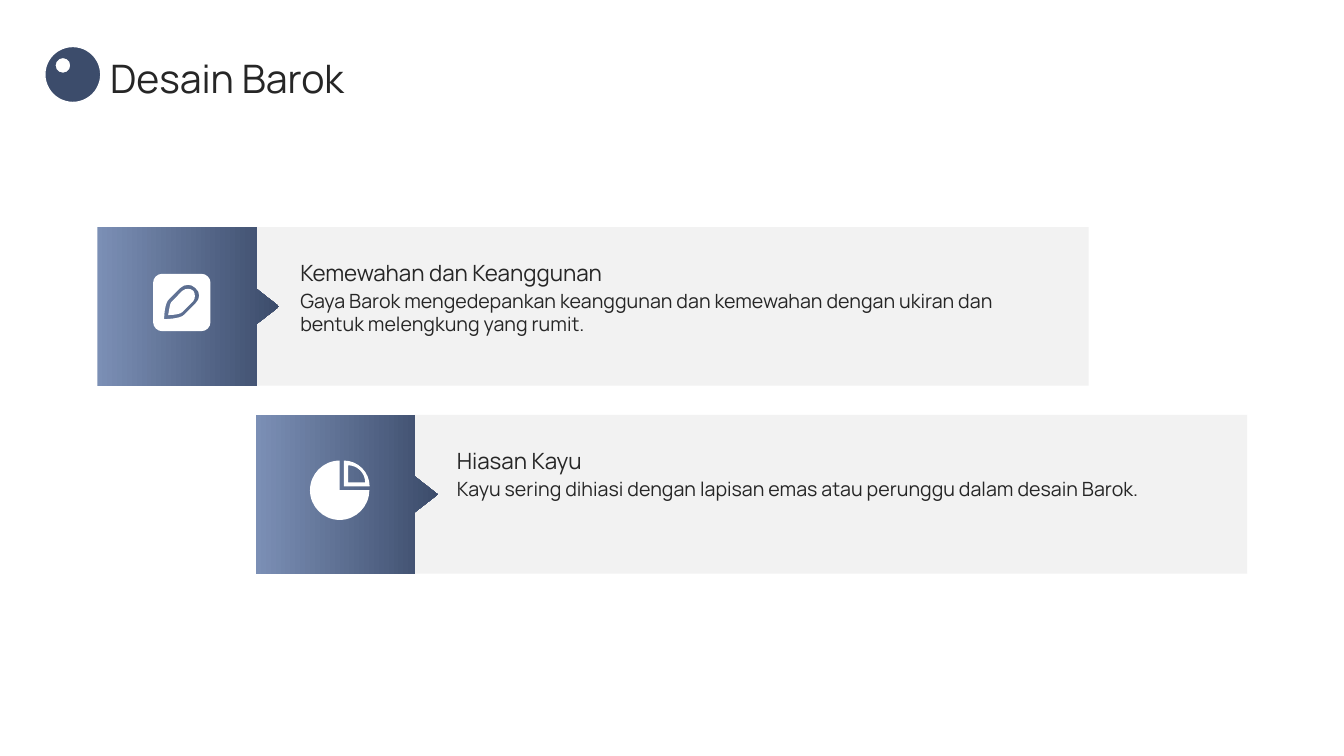
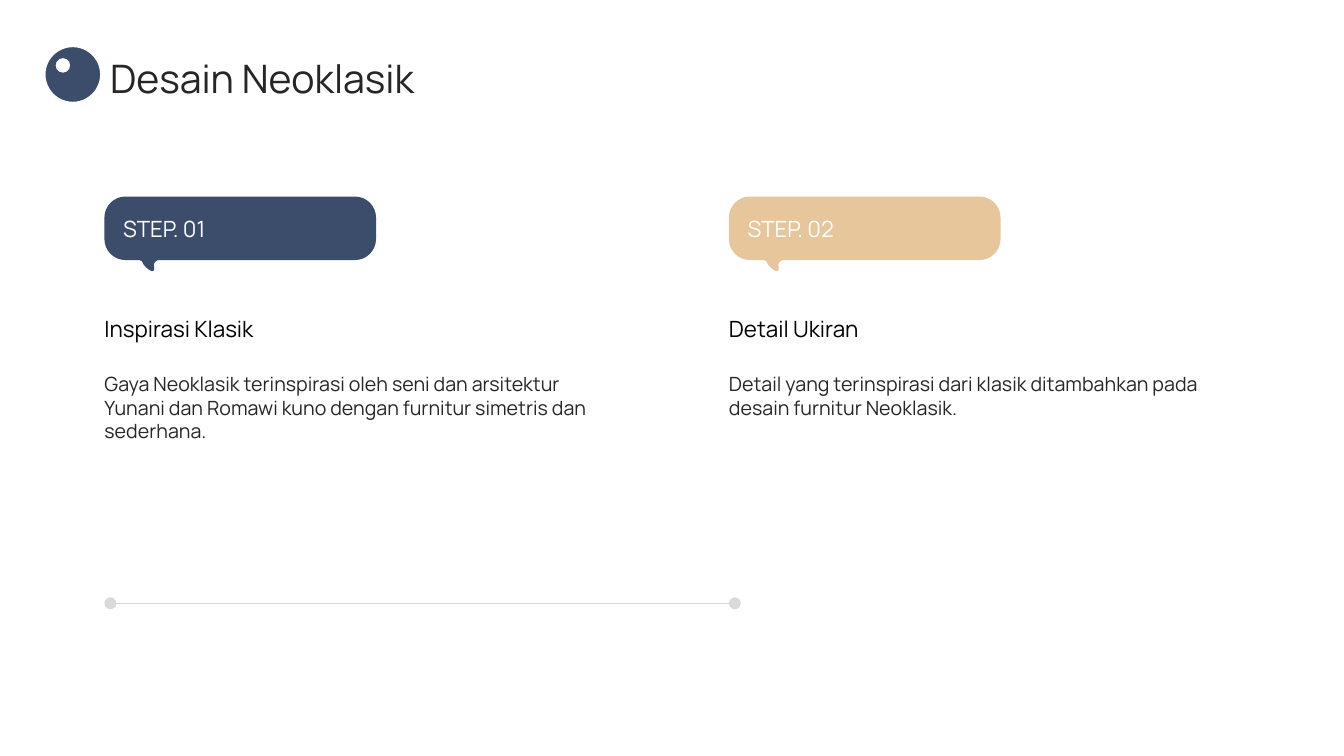
from math import cos, pi, sin

from lxml.etree import Element, SubElement
from pptx import Presentation
from pptx.dml.color import RGBColor
from pptx.enum.shapes import MSO_CONNECTOR, MSO_SHAPE
from pptx.enum.text import MSO_ANCHOR
from pptx.oxml.ns import qn
from pptx.util import Pt

FONT = "Manrope"
COLORS = {
    "navy": "3C4C6B", "sky": "7B8FB5", "sand": "E6C69A", "pale": "F2F2F2",
    "gray": "D9D9D9", "ink": "262626", "black": "000000", "white": "FFFFFF",
}


def rgb(name):
    return RGBColor.from_string(COLORS[name])


# Outlines: a point is a line, six numbers are a cubic curve
def arc(x, y, r, start, turns=1):
    """Clockwise quarter turns from the start angle."""
    path = []
    for i in range(turns + 1):
        t = (start + 90 * i) * pi / 180
        a, b = r * cos(t), r * sin(t)
        if i == 0:
            path.append((x + a, y + b))
        else:
            k = 0.55
            path.append((x + c - k * d, y + d + k * c,
                         x + a + k * b, y + b - k * a, x + a, y + b))
        c, d = a, b
    return path


def bevel(w, h, r, foot=()):
    """Rounded box, clockwise from the top left, with an optional foot."""
    return (arc(r, r, r, 180) + arc(w - r, r, r, 270) + arc(w - r, h - r, r, 0)
            + list(foot) + arc(r, h - r, r, 90))


PEN = [
    [(25.2, 10.8), (25.9, 10.8, 27.4, 10.8, 28.8, 12.2),
     (30.2, 14.4, 30.2, 17.3, 28.8, 19.4), (20.9, 27.4),
     (19.4, 28.8, 15.1, 29.5, 10.8, 29.5),
     (11.5, 25.2, 12.2, 20.9, 13, 20.2), (20.9, 12.2),
     (22.3, 10.8, 23.8, 10.8, 25.2, 10.8)],
    [(25.2, 7.9), (23, 7.9, 20.9, 8.6, 19.4, 10.1), (11.5, 18),
     (7.9, 20.9, 7.9, 32.4, 7.9, 32.4), (7.9, 32.4, 19.4, 32.4, 22.3, 29.2),
     (30.2, 21.2), (33.8, 18, 33.8, 13, 30.2, 10.1),
     (28.8, 8.6, 26.6, 7.9, 25.2, 7.9)],
    bevel(41, 41, 6.5),
]
PIE = [
    [(27.2, 15.6)] + arc(27.2, 15.6, 12.2, 270),
    [(24.2, 18.4)] + arc(24.2, 18.4, 18.4, 270),
    [(21.2, 21.2)] + arc(21.2, 21.2, 21.2, 0, 3),
]
BUBBLE = [bevel(194, 45.4, 15, [
    (38.6, 45.4), (38.4, 45.4, 38.2, 45.4, 38, 45.5),
    (34.6, 46.8, 35.1, 49.7, 35.6, 51.8),
    (35.7, 52.2, 35.6, 52.5, 35.4, 52.8),
    (35, 53.5, 34.4, 53.7, 33.8, 53.4),
    (31, 52, 28.1, 49.7, 26.8, 46.3), (26.5, 45.8, 25.9, 45.4, 25.2, 45.4),
])]
ARROW = [[(0, 0), (113.5, 0), (113.5, 44), (129.8, 56.8), (113.5, 69.5),
          (113.5, 113.5), (0, 113.5)]]


# Elements
def paint(item, fill, line=None):
    item.shadow.inherit = False
    item.fill.solid()
    item.fill.fore_color.rgb = rgb(fill)
    if line:
        item.line.color.rgb = rgb(line)
        item.line.width = Pt(1)
    else:
        item.line.fill.background()
    return item


def shape(slide, kind, x, y, w, h, fill, line=None):
    item = slide.shapes.add_shape(kind, Pt(x), Pt(y), Pt(w), Pt(h))
    return paint(item, fill, line)


def bend(node, seg, left, top):
    """Turn a line node into a cubic curve."""
    curve = Element(qn("a:cubicBezTo"))
    for a, b in zip(seg[::2], seg[1::2]):
        SubElement(curve, qn("a:pt"), x=str(Pt(a) - left), y=str(Pt(b) - top))
    node.getparent().replace(node, curve)


def form(slide, paths, x, y, fill):
    build, segs = None, []
    for path in paths:
        path = [[v + (y if i % 2 else x) for i, v in enumerate(seg)]
                for seg in path]
        pts = [(Pt(seg[-2]), Pt(seg[-1])) for seg in path]
        if build is None:
            build = slide.shapes.build_freeform(*pts[0])
        else:
            build.move_to(*pts[0])
        build.add_line_segments(pts[1:], close=True)
        segs += path[1:]
    item = build.convert_to_shape()
    nodes = list(item.element.iter(qn("a:lnTo")))
    for node, seg in zip(nodes, segs):
        if len(seg) == 6:
            bend(node, seg, item.left, item.top)
    return paint(item, fill)


def label(slide, text, x, y, w, h, size, color="ink", anchor=MSO_ANCHOR.TOP):
    frame = slide.shapes.add_textbox(Pt(x), Pt(y), Pt(w), Pt(h)).text_frame
    frame.margin_left = frame.margin_right = 0
    frame.margin_top = frame.margin_bottom = 0
    frame.word_wrap = True
    frame.vertical_anchor = anchor
    frame.text = text
    font = frame.paragraphs[0].runs[0].font
    font.name, font.size = FONT, Pt(size)
    font.color.rgb = rgb(color)


def rule(slide, x, y, end):
    line = slide.shapes.add_connector(
        MSO_CONNECTOR.STRAIGHT, Pt(x), Pt(y), Pt(end), Pt(y))
    line.line.color.rgb = rgb("gray")
    line.line.width = Pt(1)
    SubElement(line.element.spPr, qn("a:effectLst"))


def page(deck, title):
    slide = deck.slides.add_slide(deck.slide_layouts[6])
    label(slide, title, 78.7, 37.2, 855, 36.7, 28, anchor=MSO_ANCHOR.MIDDLE)
    shape(slide, MSO_SHAPE.OVAL, 32, 33.2, 40, 40, "navy", "white")
    shape(slide, MSO_SHAPE.OVAL, 39.2, 41, 11.5, 11.5, "white", "navy")
    return slide


def card(slide, x, y, left, head, body):
    shape(slide, MSO_SHAPE.RECTANGLE, x + 112.5, y, 595.5, 113.3, "pale")
    fill = form(slide, ARROW, x, y, "navy").fill
    fill.gradient()
    fill.gradient_angle = 0
    for stop, name in zip(fill.gradient_stops, ("sky", "navy")):
        stop.color.rgb = rgb(name)
    label(slide, head, left, y + 9.3, 538.6, 33, 16, anchor=MSO_ANCHOR.BOTTOM)
    label(slide, body, left, y + 44, 538.6, 60, 14)


def step(slide, x, tag, fill, head, body):
    mid = MSO_ANCHOR.MIDDLE
    form(slide, BUBBLE, x, 140.4, fill)
    label(slide, tag, x + 13.3, 149.8, 167, 26.6, 16, "white", mid)
    label(slide, head, x, 203, 365.8, 62.7, 16, "black", mid)
    label(slide, body, x, 265.7, 365.8, 113, 14)
    shape(slide, MSO_SHAPE.OVAL, x, 426.7, 8.5, 8.5, "gray")


def main():
    deck = Presentation()
    deck.slide_width, deck.slide_height = Pt(960), Pt(540)

    # Baroque: two staggered cards
    slide = page(deck, "Desain Barok")
    card(slide, 69.6, 162.2, 214.5, "Kemewahan dan Keanggunan",
         "Gaya Barok mengedepankan keanggunan dan kemewahan dengan ukiran "
         "dan bentuk melengkung yang rumit.")
    card(slide, 182.9, 296.4, 326.3, "Hiasan Kayu",
         "Kayu sering dihiasi dengan lapisan emas atau perunggu dalam "
         "desain Barok.")
    form(slide, PEN, 109.4, 195.6, "white")
    form(slide, PIE, 221.4, 329, "white")

    # Neoclassical: two steps on a line
    slide = page(deck, "Desain Neoklasik")
    left, right = 74.6, 520.7
    rule(slide, left + 4.3, 431, right + 4.3)
    step(slide, left, "STEP. 01", "navy", "Inspirasi Klasik",
         "Gaya Neoklasik terinspirasi oleh seni dan arsitektur Yunani dan "
         "Romawi kuno dengan furnitur simetris dan sederhana.")
    step(slide, right, "STEP. 02", "sand", "Detail Ukiran",
         "Detail yang terinspirasi dari klasik ditambahkan pada desain "
         "furnitur Neoklasik.")

    deck.save("out.pptx")


if __name__ == "__main__":
    main()
